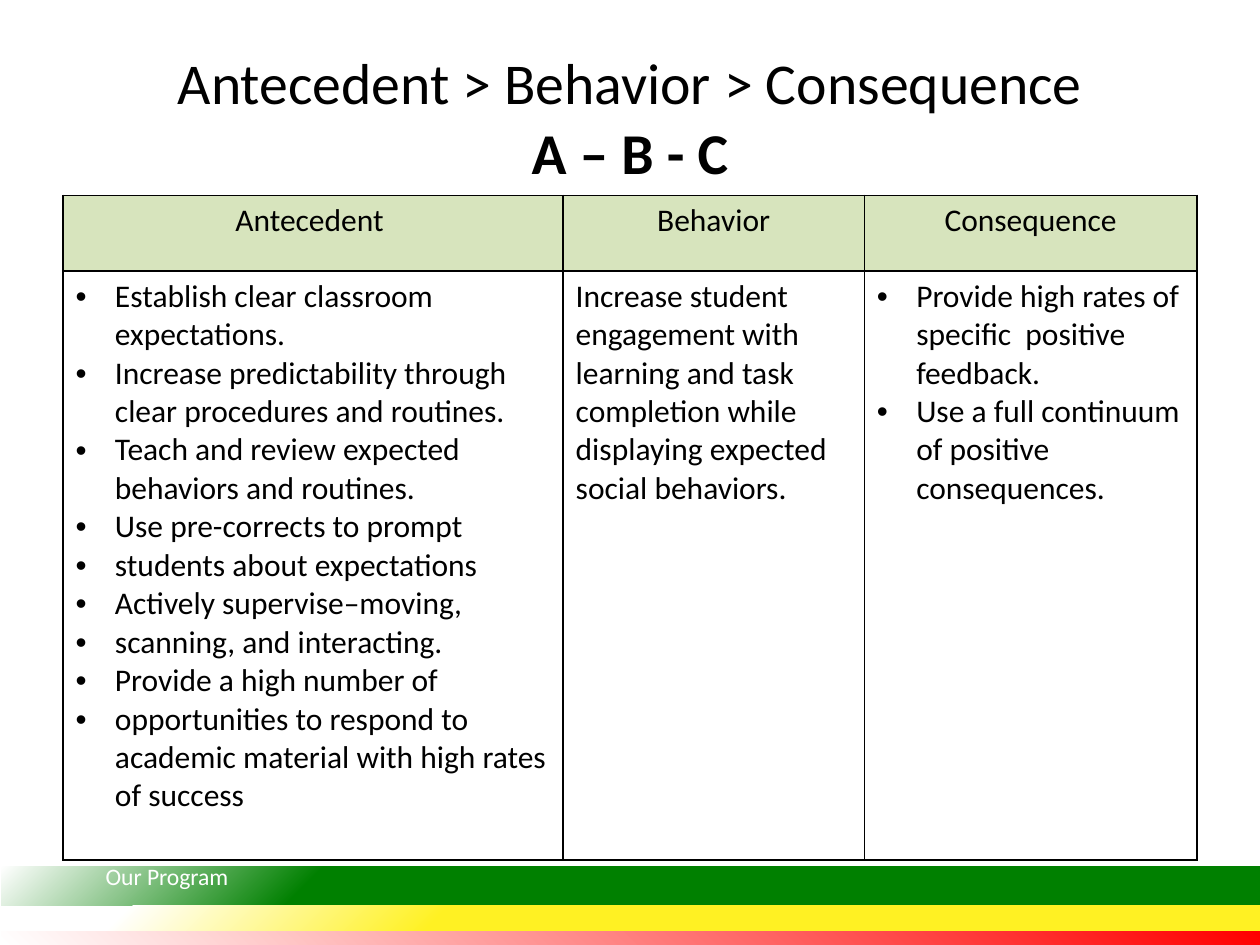
from dataclasses import dataclass

from lxml.etree import SubElement
from pptx import Presentation
from pptx.dml.color import RGBColor as RGB
from pptx.enum.shapes import MSO_SHAPE as SHAPE
from pptx.enum.text import MSO_ANCHOR as ANCHOR, MSO_AUTO_SIZE as AUTO, PP_ALIGN as ALIGN
from pptx.oxml import parse_xml
from pptx.oxml.ns import nsdecls, qn
from pptx.util import Pt


@dataclass(frozen=True)
class Theme:
    font: str = "Calibri"
    black: str = "000000"
    white: str = "FFFFFF"
    header: str = "D7E4BD"
    green: str = "008000"
    yellow: str = "FFF123"
    red: str = "FF0000"
    title_size: float = 33
    table_size: float = 18
    label_size: float = 13.5
    bullet_indent: float = 22.5


class SlideBuilder:
    def __init__(self, slide, theme):
        self.s = slide
        self.theme = theme

    def style(self, p, size, color, align=None):
        p.alignment = align
        for r in p.runs:
            r.font.name = self.theme.font
            r.font.size = Pt(size)
            r.font.color.rgb = RGB.from_string(color)

    def band(self, top, height, color, solid_to, fade_to, focus_bottom):
        sp = self.s.shapes.add_shape(SHAPE.RECTANGLE, Pt(0.7), Pt(top), Pt(720), Pt(height))
        sp.shadow.inherit = False
        sp.line.fill.background()
        sp.fill.background()
        t, b = (100000, 0) if focus_bottom else (0, 100000)
        gradient = parse_xml(
            f'<a:gradFill {nsdecls("a")} rotWithShape="1"><a:gsLst>'
            f'<a:gs pos="{solid_to * 1000}"><a:srgbClr val="{color}"/></a:gs>'
            f'<a:gs pos="{fade_to * 1000}"><a:srgbClr val="{self.theme.white}"/></a:gs>'
            f'</a:gsLst><a:path path="circle">'
            f'<a:fillToRect l="100000" t="{t}" r="0" b="{b}"/></a:path></a:gradFill>')
        props = sp.element.spPr
        props.replace(props.find(qn("a:noFill")), gradient)

    def label(self, text, left, top, width, height):
        sp = self.s.shapes.add_textbox(Pt(left), Pt(top), Pt(width), Pt(height))
        tf = sp.text_frame
        tf.word_wrap = True
        tf.auto_size = AUTO.SHAPE_TO_FIT_TEXT
        tf.text = text
        p = tf.paragraphs[0]
        self.style(p, self.theme.label_size, self.theme.white)
        shadow = parse_xml(
            f'<a:effectLst {nsdecls("a")}><a:outerShdw blurRad="38100" dist="38100" '
            f'dir="2700000"><a:srgbClr val="{self.theme.black}">'
            f'<a:alpha val="43000"/></a:srgbClr></a:outerShdw></a:effectLst>')
        p.runs[0].font._element.find(qn("a:solidFill")).addnext(shadow)

    def title(self, text, left, top, width, height):
        sp = self.s.shapes.title
        sp.left, sp.top, sp.width, sp.height = Pt(left), Pt(top), Pt(width), Pt(height)
        tf = sp.text_frame
        tf.text = text
        tf.auto_size = AUTO.NONE
        tf.vertical_anchor = ANCHOR.MIDDLE
        p = tf.paragraphs[0]
        self.style(p, self.theme.title_size, self.theme.black, ALIGN.CENTER)
        p.runs[-1].font.bold = True

    def bullet(self, p):
        props = p._p.get_or_add_pPr()
        indent = Pt(self.theme.bullet_indent)
        props.set("marL", str(indent))
        props.set("indent", str(-indent))
        SubElement(props, qn("a:buFont"), typeface="Arial")
        SubElement(props, qn("a:buChar"), char="•")

    def borders(self, cell):
        props = cell._tc.get_or_add_tcPr()
        for side in ("lnL", "lnR", "lnT", "lnB"):
            line = SubElement(props, qn(f"a:{side}"), w=str(Pt(1)))
            fill = SubElement(line, qn("a:solidFill"))
            SubElement(fill, qn("a:srgbClr"), val=self.theme.black)

    def cell(self, cell, lines, is_header):
        self.borders(cell)
        if is_header:
            cell.fill.solid()
            cell.fill.fore_color.rgb = RGB.from_string(self.theme.header)
        else:
            cell.fill.background()
        tf = cell.text_frame
        tf.text = "\n".join(lines)
        for p in tf.paragraphs:
            self.style(p, self.theme.table_size, self.theme.black,
                       ALIGN.CENTER if is_header else None)
            if len(lines) > 1:
                self.bullet(p)

    def table(self, rows, left, top, widths, heights):
        table = self.s.shapes.add_table(len(rows), len(widths), Pt(left), Pt(top),
                                        Pt(sum(widths)), Pt(sum(heights))).table
        table.first_row = table.horz_banding = False
        for column, width in zip(table.columns, widths):
            column.width = Pt(width)
        for i, (row, height) in enumerate(zip(rows, heights)):
            table.rows[i].height = Pt(height)
            for j, lines in enumerate(row):
                self.cell(table.cell(i, j), lines, i == 0)


ROWS = [
    [["Antecedent "], ["Behavior"], ["Consequence"]],
    [
        ["Establish clear classroom expectations.",
         "Increase predictability through clear procedures and routines.",
         "Teach and review expected behaviors and routines.",
         "Use pre-corrects to prompt",
         "students about expectations",
         "Actively supervise–moving,",
         "scanning, and interacting.",
         "Provide a high number of",
         "opportunities to respond to academic material with high rates of success"],
        ["Increase student engagement with learning and task completion "
         "while displaying expected social behaviors."],
        ["Provide high rates of specific  positive feedback.",
         "Use a full continuum of positive consequences."],
    ],
]


def main():
    prs = Presentation()
    prs.slide_width, prs.slide_height = Pt(720), Pt(540)
    theme = Theme()
    slide = SlideBuilder(prs.slides.add_slide(prs.slide_layouts[5]), theme)
    slide.band(532, 8.6, theme.red, 0, 100, False)
    slide.band(495, 22.5, theme.green, 75, 100, True)
    slide.band(517.5, 14.5, theme.yellow, 65, 90, True)
    slide.label("Our Program", 53.3, 489, 138, 24)
    slide.title("Antecedent > Behavior > Consequence\vA – B - C", 36, 21.6, 648, 90)
    slide.table(ROWS, 36, 111.6, [285.8, 172.1, 190.1], [43.2, 336.6])
    prs.save("out.pptx")


if __name__ == "__main__":
    main()
